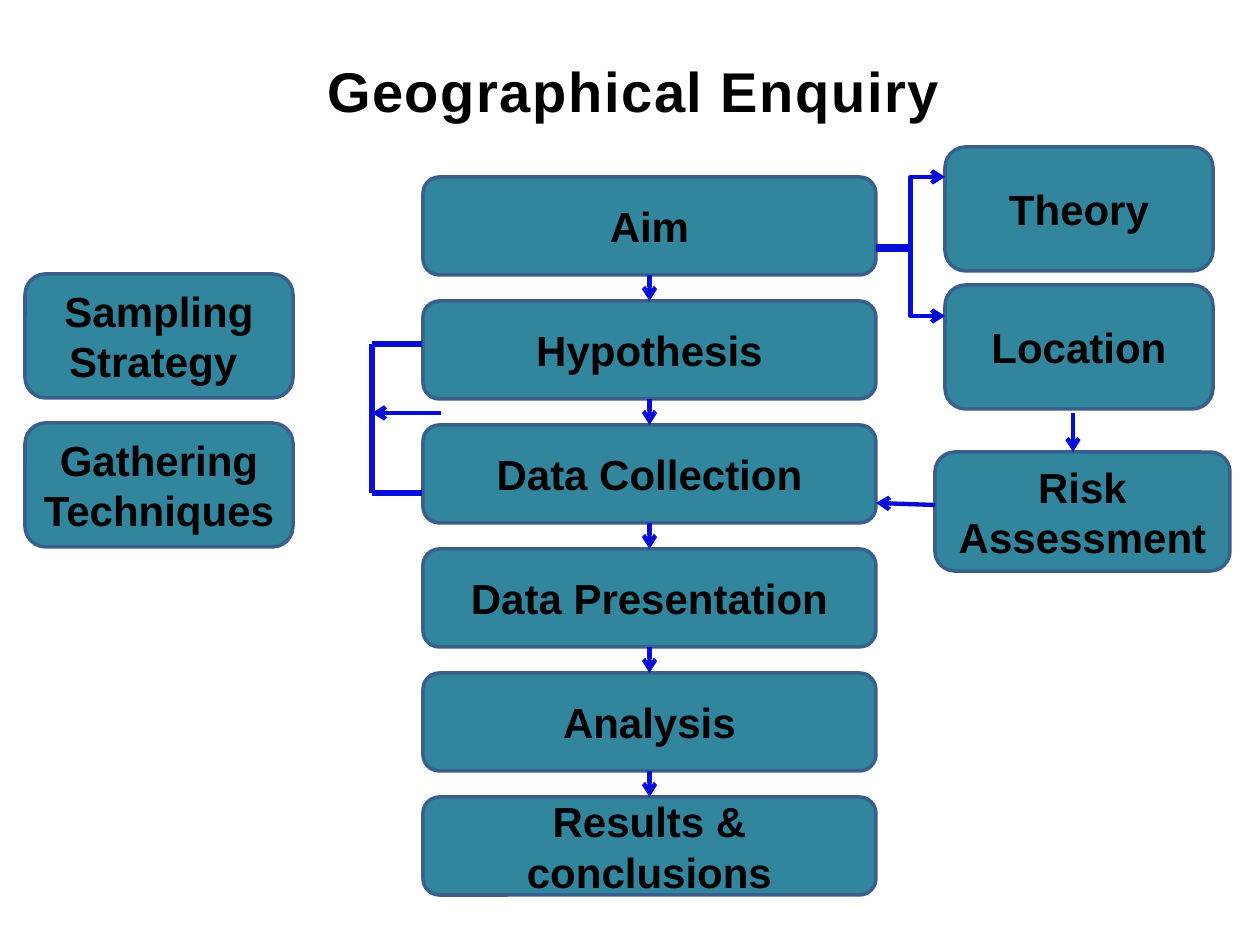
from dataclasses import dataclass
from itertools import pairwise

from lxml.etree import SubElement
from pptx import Presentation
from pptx.dml.color import RGBColor
from pptx.enum.shapes import MSO_CONNECTOR, MSO_SHAPE
from pptx.enum.text import MSO_ANCHOR, PP_ALIGN
from pptx.oxml.ns import qn
from pptx.util import Emu, Pt

EMU_PER_PX = 914400 / 126
BOTTOM, TOP = 2, 0


def px(length):
    return Emu(round(length * EMU_PER_PX))


@dataclass(frozen=True)
class Theme:
    font: str = "Arial"
    text: RGBColor = RGBColor(0x00, 0x00, 0x00)
    background: RGBColor = RGBColor(0xFF, 0xFF, 0xFF)
    box_fill: RGBColor = RGBColor(0x31, 0x85, 0x9C)
    box_edge: RGBColor = RGBColor(0x3A, 0x5F, 0x8C)
    flow: RGBColor = RGBColor(0x08, 0x0D, 0xD6)
    title_size: int = 32
    box_size: int = 24
    title_spacing: int = 90
    edge_width: float = 2
    arrow_width: float = 2.5
    bracket_width: float = 3


class Diagram:
    def __init__(self, slide, theme):
        self.slide = slide
        self.theme = theme
        slide.background.fill.solid()
        slide.background.fill.fore_color.rgb = theme.background

    def label(self, holder, words, size):
        frame = holder.text_frame
        frame.text = words
        frame.word_wrap = True
        frame.vertical_anchor = MSO_ANCHOR.MIDDLE
        paragraph = frame.paragraphs[0]
        paragraph.alignment = PP_ALIGN.CENTER
        run = paragraph.runs[0]
        run.font.name = self.theme.font
        run.font.size = Pt(size)
        run.font.bold = True
        run.font.color.rgb = self.theme.text
        return run

    def title(self, words, left, top, width, height):
        heading = self.slide.shapes.add_textbox(px(left), px(top), px(width), px(height))
        run = self.label(heading, words, self.theme.title_size)
        run._r.get_or_add_rPr().set("spc", str(self.theme.title_spacing))

    def box(self, words, left, top, width, height):
        stage = self.slide.shapes.add_shape(
            MSO_SHAPE.ROUNDED_RECTANGLE, px(left), px(top), px(width), px(height)
        )
        stage.shadow.inherit = False
        stage.fill.solid()
        stage.fill.fore_color.rgb = self.theme.box_fill
        stage.line.color.rgb = self.theme.box_edge
        stage.line.width = Pt(self.theme.edge_width)
        self.label(stage, words, self.theme.box_size)
        return stage

    def line(self, start, end, width, kind=MSO_CONNECTOR.STRAIGHT):
        link = self.slide.shapes.add_connector(kind, *map(px, start + end))
        link.line.color.rgb = self.theme.flow
        link.line.width = Pt(width)
        SubElement(link._element.spPr, qn("a:effectLst"))
        return link

    def arrow(self, start, end, kind=MSO_CONNECTOR.STRAIGHT):
        link = self.line(start, end, self.theme.arrow_width, kind)
        SubElement(link._element.spPr.find(qn("a:ln")), qn("a:tailEnd"), type="arrow")
        return link

    def flow_down(self, upper, lower):
        link = self.arrow((0, 0), (0, 0))
        link.begin_connect(upper, BOTTOM)
        link.end_connect(lower, TOP)


def build(diagram):
    diagram.title("Geographical Enquiry", 98, 29, 1071, 123)

    stages = ["Aim", "Hypothesis", "Data Collection", "Data Presentation",
              "Analysis", "Results & conclusions"]
    steps = [diagram.box(stage, 423, 177 + 124 * row, 453, 98)
             for row, stage in enumerate(stages)]
    for upper, lower in pairwise(steps):
        diagram.flow_down(upper, lower)

    side_boxes = [
        ("Theory", 945, 147),
        ("Location", 945, 285),
        ("Sampling Strategy ", 25, 274),
        ("Gathering Techniques", 25, 423),
    ]
    for words, left, top in side_boxes:
        diagram.box(words, left, top, 268, 124)
    diagram.box("Risk Assessment", 935, 452, 295, 119)

    diagram.arrow((876, 250), (945, 177), MSO_CONNECTOR.ELBOW)
    diagram.arrow((876, 246), (945, 316), MSO_CONNECTOR.ELBOW)
    diagram.arrow((935, 505), (876, 503))
    diagram.arrow((1073, 413), (1073, 452))
    diagram.arrow((441, 413), (372, 413))

    for corner, middle in ((344, 432), (493, 423)):
        for end in ((372, middle), (422, corner)):
            diagram.line((372, corner), end, diagram.theme.bracket_width)


def main():
    deck = Presentation()
    deck.slide_width, deck.slide_height = px(1260), px(945)
    slide = deck.slides.add_slide(deck.slide_layouts[6])
    build(Diagram(slide, Theme()))
    deck.save("out.pptx")


if __name__ == "__main__":
    main()
